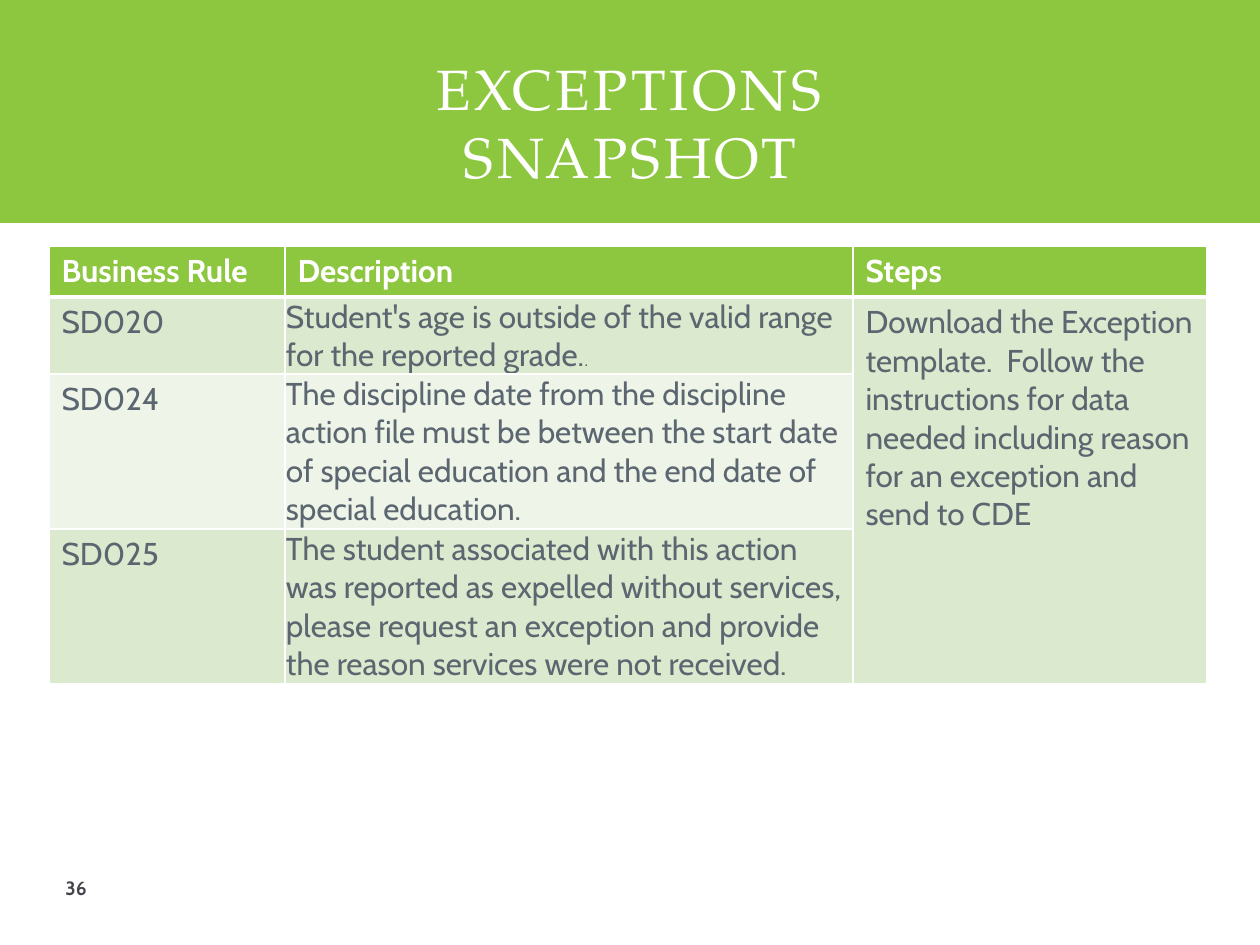
import pptx
import pptx.util
import pptx.dml.color
import pptx.enum.shapes
import pptx.enum.text
from lxml import etree

THEME = {
    "green": "8DC63F", "white": "FFFFFF", "slate": "5C6670", "dark": "45454C",
    "stop": "454545", "bands": ["DBEACF", "EEF5E8"],
    "serif": "TeX Gyre Pagella", "sans": "Cabin", "alt": "Arial",
    "title": 32.4, "body": 18, "page": 11, "tiny": 8,
}
SCALE = 914400 / 126  # EMU per px
MIDDLE = pptx.enum.text.MSO_ANCHOR.MIDDLE


def px(*sizes):
    return [pptx.util.Emu(round(size * SCALE)) for size in sizes]


def style(run, face, size, color, bold=False):
    run.font.name = face
    run.font.size = pptx.util.Pt(size)
    run.font.bold = bold
    run.font.color.rgb = pptx.dml.color.RGBColor.from_string(color)


deck = pptx.Presentation()
deck.slide_width, deck.slide_height = px(1260, 945)
slide = deck.slides.add_slide(deck.slide_layouts[6])

# Green banner
banner = slide.shapes.add_shape(
    pptx.enum.shapes.MSO_SHAPE.RECTANGLE, *px(0, 0, 1260, 223))
banner.shadow.inherit = False
banner.fill.solid()
banner.fill.fore_color.rgb = pptx.dml.color.RGBColor.from_string(THEME["green"])
banner.line.fill.background()

# Title
title = slide.shapes.add_textbox(*px(53, 49, 1155, 145)).text_frame
title.word_wrap = True
title.vertical_anchor = MIDDLE
title.text = "EXCEPTIONS\vSNAPSHOT"
title.paragraphs[0].alignment = pptx.enum.text.PP_ALIGN.CENTER
for run in title.paragraphs[0].runs:
    style(run, THEME["serif"], THEME["title"], THEME["white"])
    run.font._element.set("spc", "200")

# Rules table
rows = [
    ["Business Rule", "Description", "Steps"],
    ["SD020", "Student's age is outside of the valid range for the reported grade.",
     "Download the Exception template.  Follow the instructions for data needed "
     "including reason for an exception and send to CDE"],
    ["SD024", "The discipline date from the discipline action file must be between "
     "the start date of special education and the end date of special education.", ""],
    ["SD025", "The student associated with this action was reported as expelled "
     "without services, please request an exception and provide the reason "
     "services were not received.", ""],
]
widths = px(236, 568, 354)
heights = px(51, 77, 155, 155)
table = slide.shapes.add_table(
    len(rows), len(widths), *px(49, 246), sum(widths), sum(heights)).table
for column, width in zip(table.columns, widths):
    column.width = width
for row, height in zip(table.rows, heights):
    row.height = height

for r, texts in enumerate(rows):
    head = r == 0
    for c, text in enumerate(texts):
        cell = table.cell(r, c)
        # White rules, thick below the header
        props = cell._tc.get_or_add_tcPr()
        for side in "LRTB":
            thick = (r, side) in [(0, "B"), (1, "T")]
            line = etree.SubElement(
                props, pptx.oxml.ns.qn("a:ln" + side),
                w=str(pptx.util.Pt(3 if thick else 1)))
            solid = etree.SubElement(line, pptx.oxml.ns.qn("a:solidFill"))
            etree.SubElement(
                solid, pptx.oxml.ns.qn("a:srgbClr"), val=THEME["white"])
        # Banded fill; the merged steps cell keeps the first band
        band = 0 if c == 2 else (r - 1) % 2
        fill = THEME["green"] if head else THEME["bands"][band]
        cell.fill.solid()
        cell.fill.fore_color.rgb = pptx.dml.color.RGBColor.from_string(fill)
        if c == 1 and not head:
            cell.margin_left, cell.margin_top, cell.margin_right = px(1, 1, 1)
            cell.margin_bottom = 0
        if text:
            cell.text_frame.text = text
            style(cell.text_frame.paragraphs[0].runs[0], THEME["sans"],
                  THEME["body"], THEME["white" if head else "slate"], head)

table.cell(1, 2).merge(table.cell(3, 2))
stop = table.cell(1, 1).text_frame.paragraphs[0].add_run()
stop.text = "."
style(stop, THEME["alt"], THEME["tiny"], THEME["stop"])

# Page number
page = slide.shapes.add_textbox(*px(53, 863, 399, 50)).text_frame
page.word_wrap = True
page.vertical_anchor = MIDDLE
page.text = "36"
style(page.paragraphs[0].runs[0], THEME["sans"], THEME["page"], THEME["dark"], True)

deck.save("out.pptx")
